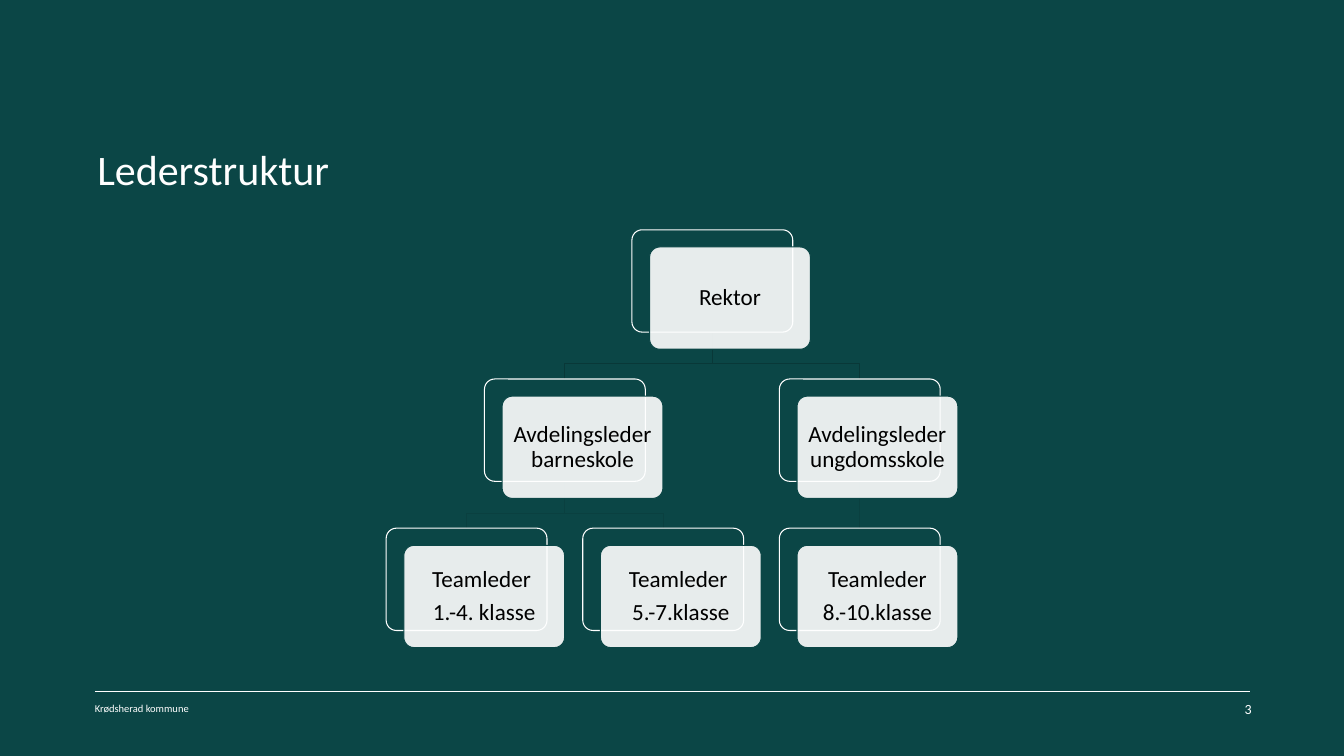
from dataclasses import dataclass

from lxml import etree
from pptx import Presentation
from pptx.dml.color import RGBColor
from pptx.enum.shapes import MSO_CONNECTOR, MSO_SHAPE
from pptx.enum.text import MSO_ANCHOR, PP_ALIGN
from pptx.oxml.ns import qn
from pptx.util import Inches, Pt

ROUND = MSO_SHAPE.ROUNDED_RECTANGLE
STRAIGHT = MSO_CONNECTOR.STRAIGHT
MIDDLE, TOP = MSO_ANCHOR.MIDDLE, MSO_ANCHOR.TOP
LEFT, CENTER, RIGHT = PP_ALIGN.LEFT, PP_ALIGN.CENTER, PP_ALIGN.RIGHT


@dataclass(frozen=True)
class Theme:
    font: str = "Calibri"
    back: RGBColor = RGBColor.from_string("0B4646")
    white: RGBColor = RGBColor.from_string("FFFFFF")
    black: RGBColor = RGBColor.from_string("000000")
    links: tuple = (RGBColor.from_string("093838"), RGBColor.from_string("0A4040"))
    title: int = 60
    card: int = 33
    page: int = 20
    foot: int = 15


theme = Theme()


def write(shape, lines, size, color, align, anchor, inset=0):
    frame = shape.text_frame
    frame.word_wrap = True
    frame.vertical_anchor = anchor
    frame.margin_left = frame.margin_right = Inches(inset)
    frame.margin_top = frame.margin_bottom = Inches(inset)
    for i, line in enumerate(lines):
        para = frame.paragraphs[0] if i == 0 else frame.add_paragraph()
        para.alignment = align
        run = para.add_run()
        run.text = line
        run.font.name = theme.font
        run.font.size = Pt(size)
        run.font.color.rgb = color


def panel(x, y, fill, line):
    shape = shapes.add_shape(ROUND, Inches(x), Inches(y), Inches(WIDE), Inches(HIGH))
    shape.adjustments[0] = 0.1
    shape.shadow.inherit = False
    shape.fill.solid()
    shape.fill.fore_color.rgb = fill
    shape.line.color.rgb = line
    shape.line.width = Pt(1.5)
    return shape


deck = Presentation()
deck.slide_width, deck.slide_height = Inches(26.66), Inches(15)
slide = deck.slides.add_slide(deck.slide_layouts[6])
slide.background.fill.solid()
slide.background.fill.fore_color.rgb = theme.back
shapes = slide.shapes

# Footer rule
rule = shapes.add_connector(STRAIGHT, Inches(1.88), Inches(13.71), Inches(24.79), Inches(13.71))
rule.line.color.rgb = theme.white
rule.line.width = Pt(0.3)
etree.SubElement(rule.element.spPr, qn("a:effectLst"))

# Title, footer and page number
for text, box, size, align, anchor in [
    ("Krødsherad kommune", (1.88, 13.92, 6.56, 0.25), theme.foot, LEFT, TOP),
    ("Lederstruktur", (1.93, 2.84, 22.8, 1.01), theme.title, LEFT, TOP),
    ("3", (18.83, 13.89, 6, 0.34), theme.page, RIGHT, MIDDLE),
]:
    label = shapes.add_textbox(*[Inches(v) for v in box])
    write(label, [text], size, theme.white, align, anchor)

# Chart of leaders: key, column, row, parent, lines
WIDE, HIGH = 3.19, 2.03
LEFT_X, TOP_Y = 7.66, 4.56
STEP_X, STEP_Y = 1.95, 2.96
SHIFT_X, SHIFT_Y = 0.35, 0.34
BEND = 0.63
roles = [
    ("head", 2.5, 0, None, ["Rektor"]),
    ("child", 1, 1, "head", ["Avdelingsleder barneskole"]),
    ("low", 0, 2, "child", ["Teamleder ", "1.-4. klasse"]),
    ("mid", 2, 2, "child", ["Teamleder ", "5.-7.klasse"]),
    ("youth", 4, 1, "head", ["Avdelingsleder ungdomsskole"]),
    ("high", 4, 2, "youth", ["Teamleder", "8.-10.klasse"]),
]

# Each role: an outlined frame with a pale card in front
frames = {}
for key, col, row, boss, lines in roles:
    x, y = LEFT_X + col * STEP_X, TOP_Y + row * STEP_Y
    frames[key] = panel(x, y, theme.back, theme.white)
    card = panel(x + SHIFT_X, y + SHIFT_Y, theme.white, theme.back)
    tint = card.fill._xPr.find(qn("a:solidFill"))[0]
    etree.SubElement(tint, qn("a:alpha"), val="90000")
    write(card, lines, theme.card, theme.black, CENTER, MIDDLE, 0.14)
    for para in card.text_frame.paragraphs:
        para.line_spacing = 0.9
        para.space_after = Pt(11.5)

# Links from parent to child, placed behind the cards
for key, col, row, boss, lines in roles:
    if boss is None:
        continue
    start, end = frames[boss], frames[key]
    x1, y1 = start.left + start.width // 2, start.top + start.height
    x2, y2 = end.left + end.width // 2, end.top
    if x1 == x2:
        link = shapes.add_connector(STRAIGHT, x1, y1, x2, y2)
        link.begin_connect(start, 2)
        link.end_connect(end, 0)
        etree.SubElement(link.element.spPr, qn("a:effectLst"))
    else:
        bend = y1 + Inches(BEND)
        path = shapes.build_freeform(x1, y1)
        path.add_line_segments([(x1, bend), (x2, bend), (x2, y2)], close=False)
        link = path.convert_to_shape()
        link.fill.background()
        link.shadow.inherit = False
    link.line.color.rgb = theme.links[row - 1]
    link.line.width = Pt(1.5)
    link.element.getparent().insert(2, link.element)

deck.save("out.pptx")
